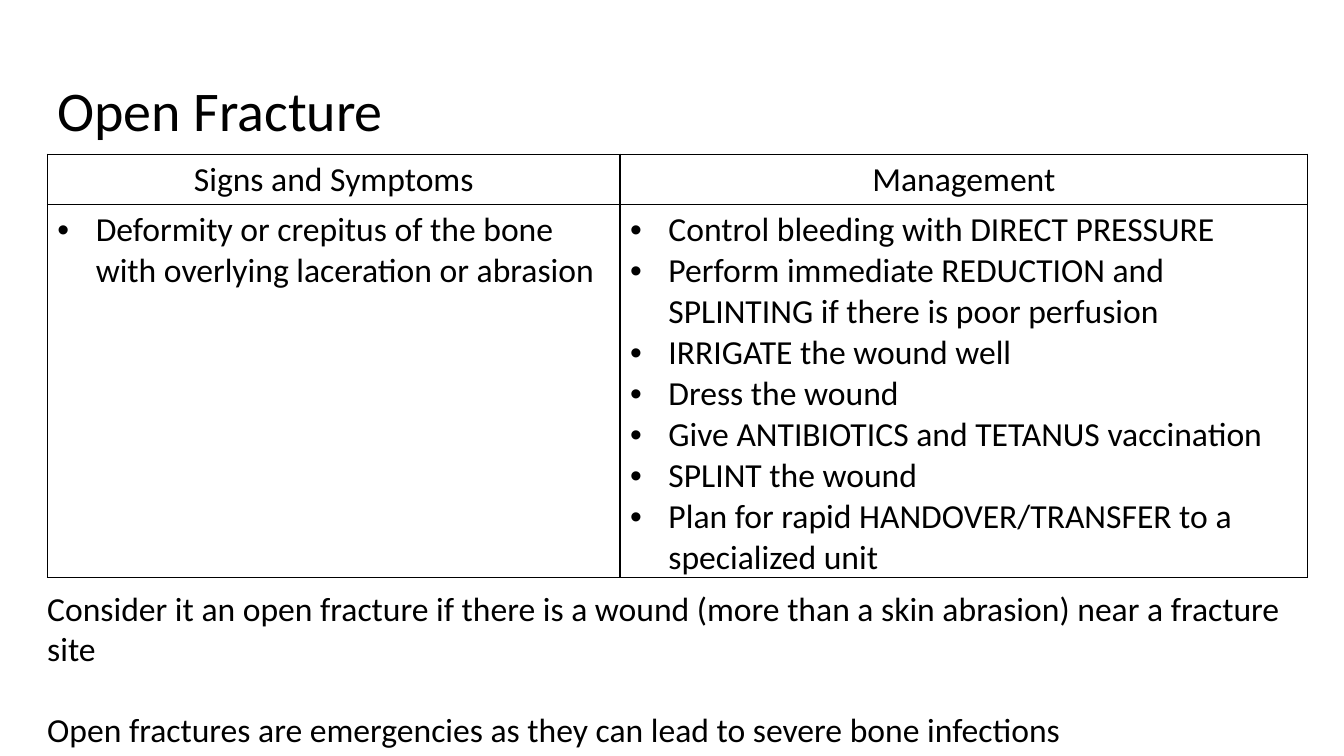
import pptx
import pptx.util
import pptx.dml.color
import pptx.enum.text
import lxml.etree

Inches = pptx.util.Inches
Pt = pptx.util.Pt
ANCHOR = pptx.enum.text.MSO_ANCHOR
ALIGN = pptx.enum.text.PP_ALIGN
NS = "{http://schemas.openxmlformats.org/drawingml/2006/main}"
BLACK, WHITE = "000000", "FFFFFF"


def color(code):
    return pptx.dml.color.RGBColor.from_string(code)


def write(frame, lines, size=24, bullet=False, **form):
    """Fill a text frame, one paragraph a line; form holds paragraph values."""
    frame.word_wrap = True
    for i, line in enumerate(lines):
        para = frame.add_paragraph() if i else frame.paragraphs[0]
        para.text = line
        if bullet:
            props = para._p.get_or_add_pPr()
            props.set("marL", str(Inches(0.38)))
            props.set("indent", str(Inches(-0.38)))
            lxml.etree.SubElement(props, NS + "buFont", typeface="Arial")
            lxml.etree.SubElement(props, NS + "buChar", char="•")
        for name, value in form.items():
            if name != "space_before" or i:
                setattr(para, name, value)
        look = {"name": "Calibri", "size": Pt(size), "bold": False}
        for name, value in look.items():
            setattr(para.font, name, value)
        para.font.color.rgb = color(BLACK)


deck = pptx.Presentation()
deck.slide_width, deck.slide_height = Inches(13.33), Inches(7.5)
slide = deck.slides.add_slide(deck.slide_layouts[6])

# Title
title = slide.shapes.add_textbox(Inches(0.47), Inches(0.4), Inches(12.4), Inches(1.45))
title.text_frame.vertical_anchor = ANCHOR.MIDDLE
write(title.text_frame, ["Open Fracture"], size=40, line_spacing=0.9)

# Table: each column has a heading and a list of points
columns = [
    ("Signs and Symptoms", 5.68, [
        "Deformity or crepitus of the bone with overlying laceration or abrasion",
    ]),
    ("Management", 6.82, [
        "Control bleeding with DIRECT PRESSURE",
        "Perform immediate REDUCTION and SPLINTING if there is poor perfusion",
        "IRRIGATE the wound well",
        "Dress the wound",
        "Give ANTIBIOTICS and TETANUS vaccination",
        "SPLINT the wound",
        "Plan for rapid HANDOVER/TRANSFER to a specialized unit",
    ]),
]
table = slide.shapes.add_table(
    2, 2, Inches(0.47), Inches(1.53), Inches(12.5), Inches(4.2)).table
table.first_row = table.horz_banding = False
for row, height in zip(table.rows, (0.5, 3.7)):
    row.height = Inches(height)
for i, (head, width, points) in enumerate(columns):
    table.columns[i].width = Inches(width)
    write(table.cell(0, i).text_frame, [head], alignment=ALIGN.CENTER)
    write(table.cell(1, i).text_frame, points, bullet=True)

for cell in table.iter_cells():
    props = cell._tc.get_or_add_tcPr()
    for side in ("lnL", "lnR", "lnT", "lnB"):
        line = lxml.etree.SubElement(props, NS + side, w=str(Pt(1)))
        fill = lxml.etree.SubElement(line, NS + "solidFill")
        lxml.etree.SubElement(fill, NS + "srgbClr", val=BLACK)
    cell.fill.solid()
    cell.fill.fore_color.rgb = color(WHITE)

# Closing notes
notes = slide.shapes.add_textbox(Inches(0.37), Inches(5.78), Inches(12.5), Inches(1.72))
write(notes.text_frame, [
    "Consider it an open fracture if there is a wound "
    "(more than a skin abrasion) near a fracture site",
    "Open fractures are emergencies as they can lead to severe bone infections",
], space_before=Pt(29))

deck.save("out.pptx")
